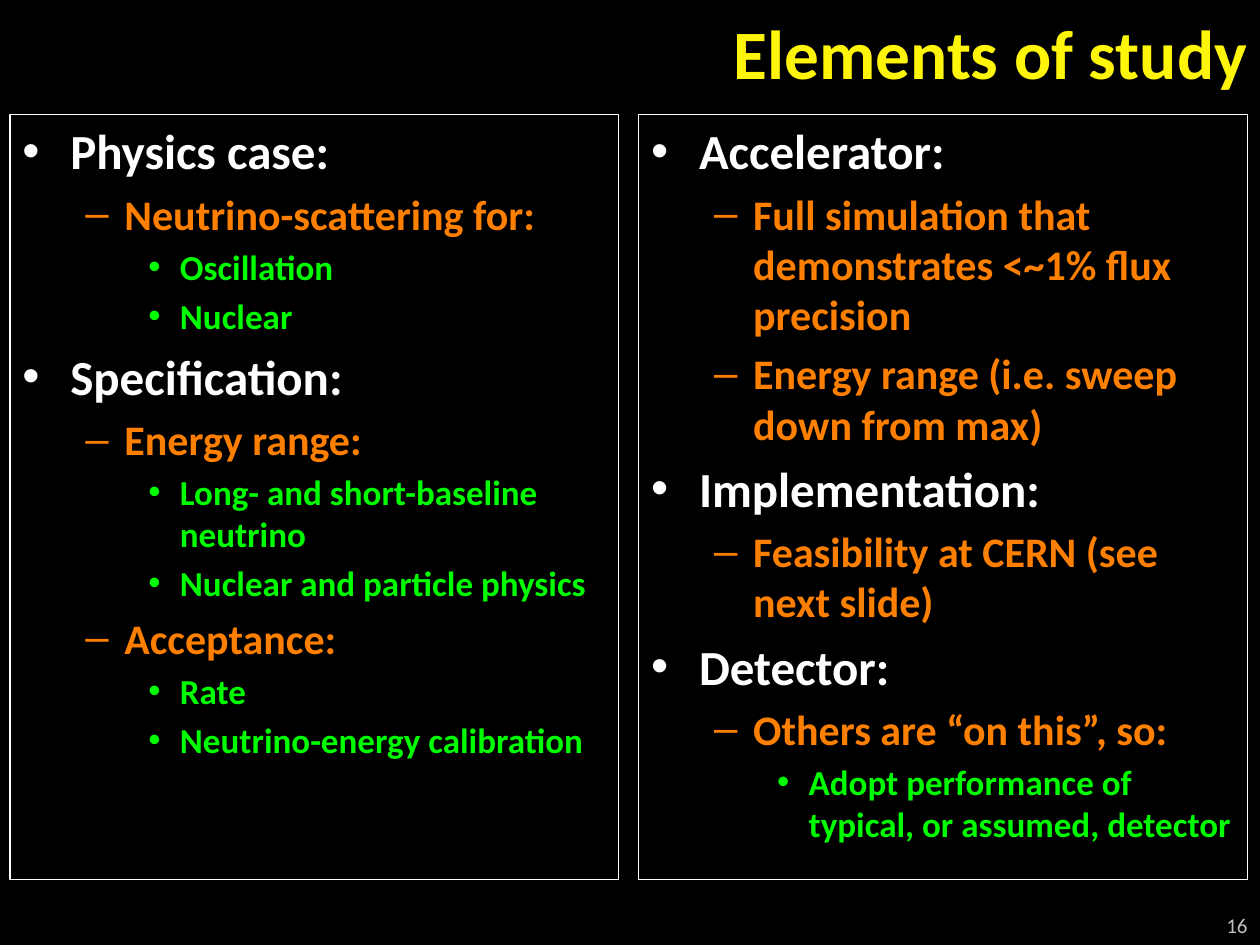
from lxml import etree
from pptx import Presentation
from pptx.dml.color import RGBColor
from pptx.enum.shapes import MSO_SHAPE
from pptx.enum.text import MSO_ANCHOR, MSO_AUTO_SIZE, PP_ALIGN
from pptx.oxml.ns import qn
from pptx.util import Emu, Inches, Pt

RECT = MSO_SHAPE.RECTANGLE
TOP, MIDDLE = MSO_ANCHOR.TOP, MSO_ANCHOR.MIDDLE
LEFT, RIGHT = PP_ALIGN.LEFT, PP_ALIGN.RIGHT
FIXED = MSO_AUTO_SIZE.NONE

BLACK = RGBColor(0x00, 0x00, 0x00)
WHITE = RGBColor(0xFF, 0xFF, 0xFF)
YELLOW = RGBColor(0xFF, 0xF5, 0x0A)
ORANGE = RGBColor(0xFF, 0x80, 0x00)
GREEN = RGBColor(0x00, 0xFF, 0x00)
GREY = RGBColor(0xBF, 0xBF, 0xBF)

FONT = "Calibri"
WIDE, HIGH = Inches(10), Inches(7.5)
EDGE, GAP = Inches(0.08), Inches(0.16)
PANEL = Inches(4.83)
HEAD = Inches(0.82)

LEVELS = [
    {"size": 28, "color": WHITE, "mark": "•", "left": 0.38, "hang": 0.38},
    {"size": 24, "color": ORANGE, "mark": "–", "left": 0.81, "hang": 0.31},
    {"size": 20, "color": GREEN, "mark": "•", "left": 1.25, "hang": 0.25},
]

PANELS = [
    [
        (0, "Physics case:"),
        (1, "Neutrino-scattering for:"),
        (2, "Oscillation"),
        (2, "Nuclear"),
        (0, "Specification:"),
        (1, "Energy range:"),
        (2, "Long- and short-baseline neutrino"),
        (2, "Nuclear and particle physics"),
        (1, "Acceptance:"),
        (2, "Rate"),
        (2, "Neutrino-energy calibration"),
    ],
    [
        (0, "Accelerator:"),
        (1, "Full simulation that demonstrates <~1% flux precision"),
        (1, "Energy range (i.e. sweep down from max)"),
        (0, "Implementation:"),
        (1, "Feasibility at CERN (see next slide)"),
        (0, "Detector:"),
        (1, "Others are “on this”, so:"),
        (2, "Adopt performance of typical, or assumed, detector"),
    ],
]


def write(para, text, size, color, bold=True, align=LEFT):
    para.alignment = align
    run = para.add_run()
    run.text = text
    font = run.font
    font.name, font.size, font.bold = FONT, Pt(size), bold
    font.color.rgb = color


def place(shape, left, top, width, height):
    shape.left, shape.top = Emu(left), Emu(top)
    shape.width, shape.height = Emu(width), Emu(height)


def frame(shape, anchor):
    body = shape.text_frame
    body.word_wrap = True
    body.auto_size = FIXED
    body.vertical_anchor = anchor
    return body


def bullet(para, mark, left, hang):
    props = para._p.get_or_add_pPr()
    props.set("marL", str(Inches(left)))
    props.set("indent", str(-Inches(hang)))
    etree.SubElement(props, qn("a:buFont")).set("typeface", "Arial")
    etree.SubElement(props, qn("a:buChar")).set("char", mark)


def add_title(slide, text):
    title = slide.shapes.title
    place(title, 0, 0, WIDE, HEAD)
    body = frame(title, MIDDLE)
    write(body.paragraphs[0], text, size=39.6, color=YELLOW, align=RIGHT)


def add_panel(slide, col, items):
    left = EDGE + col * (PANEL + GAP)
    box = slide.shapes.add_shape(RECT, left, Inches(0.91), PANEL, Inches(6.07))
    box.shadow.inherit = False
    box.fill.background()
    box.line.color.rgb = WHITE
    box.line.width = Pt(0.75)
    body = frame(box, TOP)
    for row, (level, text) in enumerate(items):
        para = body.add_paragraph() if row else body.paragraphs[0]
        style = LEVELS[level]
        para.level = level
        para.space_before = Pt(style["size"] * 0.2)
        write(para, text, size=style["size"], color=style["color"])
        bullet(para, style["mark"], style["left"], style["hang"])


def add_number(slide, text):
    width, height = Inches(2.33), Inches(0.31)
    box = slide.shapes.add_textbox(WIDE - width, HIGH - height, width, height)
    body = frame(box, MIDDLE)
    write(body.paragraphs[0], text, size=12, color=GREY, bold=False, align=RIGHT)


def main():
    deck = Presentation()
    deck.slide_width, deck.slide_height = WIDE, HIGH
    slide = deck.slides.add_slide(deck.slide_layouts[5])
    fill = slide.background.fill
    fill.solid()
    fill.fore_color.rgb = BLACK
    add_title(slide, "Elements of study")
    for col, items in enumerate(PANELS):
        add_panel(slide, col, items)
    add_number(slide, "16")
    deck.save("out.pptx")


if __name__ == "__main__":
    main()
